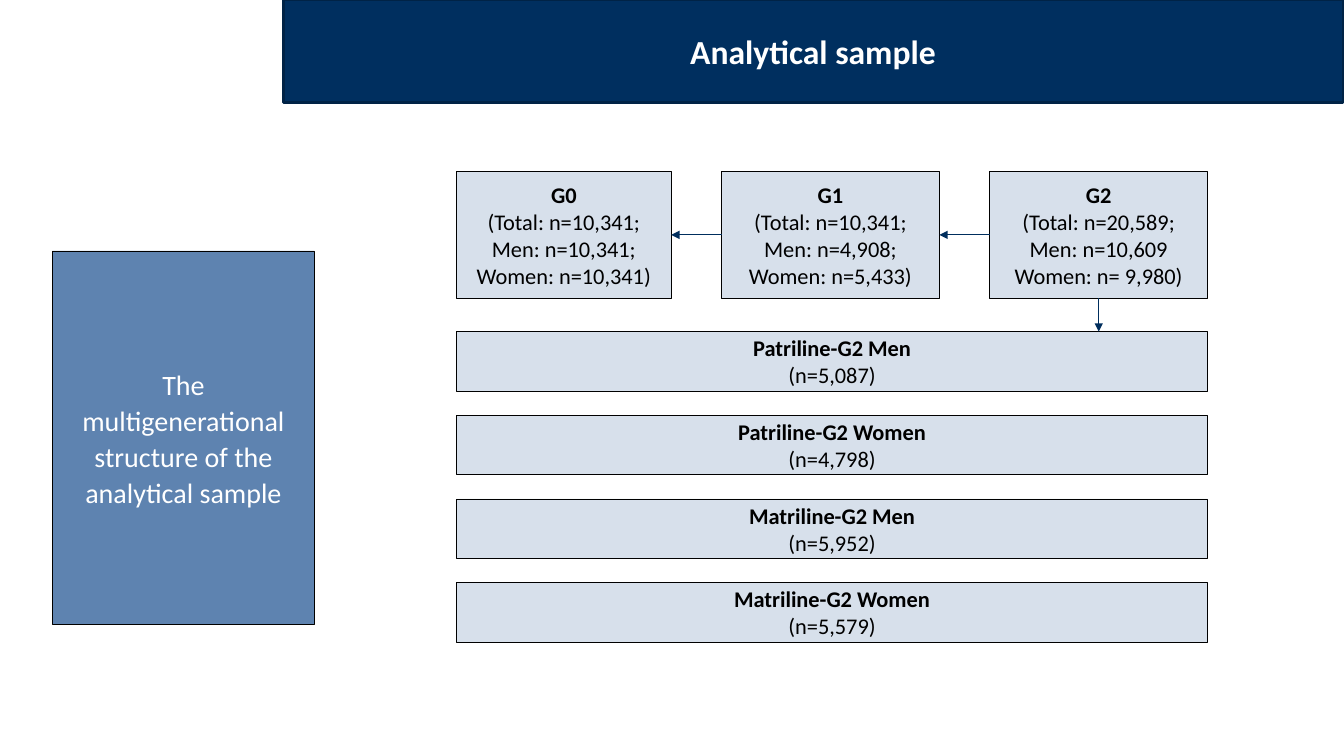
from dataclasses import dataclass
from itertools import accumulate

from lxml.etree import SubElement
from pptx import Presentation
from pptx.dml.color import RGBColor
from pptx.enum.shapes import MSO_CONNECTOR, MSO_SHAPE
from pptx.enum.text import MSO_ANCHOR, PP_ALIGN
from pptx.oxml.ns import qn
from pptx.util import Inches, Pt

UNIT = Inches(0.1)  # side of one grid cell
COLUMNS, ROWS = 133.33, 75
TOP, LEFT, BOTTOM, RIGHT = 0, 1, 2, 3


@dataclass(frozen=True)
class Theme:
    font: str = "Calibri"
    banner: str = "002F5F"
    banner_edge: str = "002346"
    caption: str = "5E83B0"
    card: str = "D7E0EB"
    arrow: str = "002E5D"
    light: str = "FFFFFF"
    dark: str = "000000"
    title_size: float = 24
    caption_size: float = 20
    card_size: float = 16
    banner_line: float = 2
    card_line: float = 0.5
    arrow_line: float = 0.75


THEME = Theme()


@dataclass(frozen=True)
class Box:
    """A rectangle measured in grid columns and rows."""
    left: float
    top: float
    width: float
    height: float

    def lengths(self):
        return [round(cells * UNIT)
                for cells in (self.left, self.top, self.width, self.height)]


GENERATIONS = [
    ("G0", "(Total: n=10,341;", "Men: n=10,341;", "Women: n=10,341)"),
    ("G1", "(Total: n=10,341; Men: n=4,908;", "Women: n=5,433)"),
    ("G2", "(Total: n=20,589; Men: n=10,609", "Women: n= 9,980)"),
]
LINEAGES = [
    ("Patriline-G2 Men", "(n=5,087)"),
    ("Patriline-G2 Women", "(n=4,798)"),
    ("Matriline-G2 Men", "(n=5,952)"),
    ("Matriline-G2 Women", "(n=5,579)"),
]


def paint(shape, fill, edge, weight):
    shape.fill.solid()
    shape.fill.fore_color.rgb = RGBColor.from_string(fill)
    shape.line.color.rgb = RGBColor.from_string(edge)
    shape.line.width = Pt(weight)


def write(shape, lines, size, color, bold_first=True):
    """Centre the lines in the shape, one paragraph each."""
    frame = shape.text_frame
    frame.word_wrap = True
    frame.vertical_anchor = MSO_ANCHOR.MIDDLE
    for index, line in enumerate(lines):
        para = frame.add_paragraph() if index else frame.paragraphs[0]
        para.alignment = PP_ALIGN.CENTER
        span = para.add_run()
        span.text = line
        span.font.name = THEME.font
        span.font.size = Pt(size)
        span.font.bold = bold_first and index == 0
        span.font.color.rgb = RGBColor.from_string(color)


def add_panel(page, box, fill):
    panel = page.shapes.add_shape(MSO_SHAPE.RECTANGLE, *box.lengths())
    panel.shadow.inherit = False
    paint(panel, fill, THEME.dark, THEME.card_line)
    return panel


def add_card(page, box, lines):
    card = add_panel(page, box, THEME.card)
    write(card, lines, THEME.card_size, THEME.dark)
    return card


def add_arrow(page, start, start_side, end_x=0, end_y=0):
    """Draw an arrow from a side of the start shape to a point."""
    arrow = page.shapes.add_connector(MSO_CONNECTOR.STRAIGHT, 0, 0, end_x, end_y)
    arrow.begin_connect(start, start_side)
    arrow.line.color.rgb = RGBColor.from_string(THEME.arrow)
    arrow.line.width = Pt(THEME.arrow_line)
    SubElement(arrow.line._get_or_add_ln(), qn("a:tailEnd"), type="triangle")
    SubElement(arrow._element.spPr, qn("a:effectLst"))
    return arrow


def add_banner(page, box):
    title = page.shapes.title
    title.left, title.top, title.width, title.height = box.lengths()
    paint(title, THEME.banner, THEME.banner_edge, THEME.banner_line)
    write(title, ["Analytical sample"], THEME.title_size, THEME.light)


def add_caption(page, box):
    caption = add_panel(page, box, THEME.caption)
    write(caption, ["The multigenerational structure of the analytical sample"],
          THEME.caption_size, THEME.light, bold_first=False)
    para = caption.text_frame.paragraphs[0]
    para.line_spacing = 1.07
    para.space_after = Pt(8)


def add_generations(page, box):
    """Place the generations side by side, each pointing to the one before."""
    gap = 5
    shares = (0.33, 0.335, 0.335)
    widths = [share * (box.width - 2 * gap) for share in shares]
    lefts = accumulate((width + gap for width in widths[:-1]), initial=box.left)
    cards = [add_card(page, Box(left, box.top, width, box.height), lines)
             for left, width, lines in zip(lefts, widths, GENERATIONS)]
    for parent, child in zip(cards, cards[1:]):
        add_arrow(page, child, LEFT).end_connect(parent, RIGHT)
    return cards


def add_lineages(page, box):
    """Stack the lineages at an equal pitch."""
    height = 5.9
    pitch = (box.height - height) / (len(LINEAGES) - 1)
    return [add_card(page, Box(box.left, box.top + row * pitch, box.width, height), lines)
            for row, lines in enumerate(LINEAGES)]


def add_sample_slide(deck):
    page = deck.slides.add_slide(deck.slide_layouts[5])
    add_banner(page, Box(28.1, 0, COLUMNS - 28.2, 10.2))
    add_caption(page, Box(5.2, 24.9, 26, 37))
    youngest = add_generations(page, Box(45.3, 17, 74.5, 12.6))[-1]
    first = add_lineages(page, Box(45.3, 32.9, 74.5, 30.8))[0]
    add_arrow(page, youngest, BOTTOM, youngest.left + youngest.width // 2, first.top)


def main():
    deck = Presentation()
    deck.slide_width = round(COLUMNS * UNIT)
    deck.slide_height = ROWS * UNIT
    add_sample_slide(deck)
    deck.save("out.pptx")


if __name__ == "__main__":
    main()
